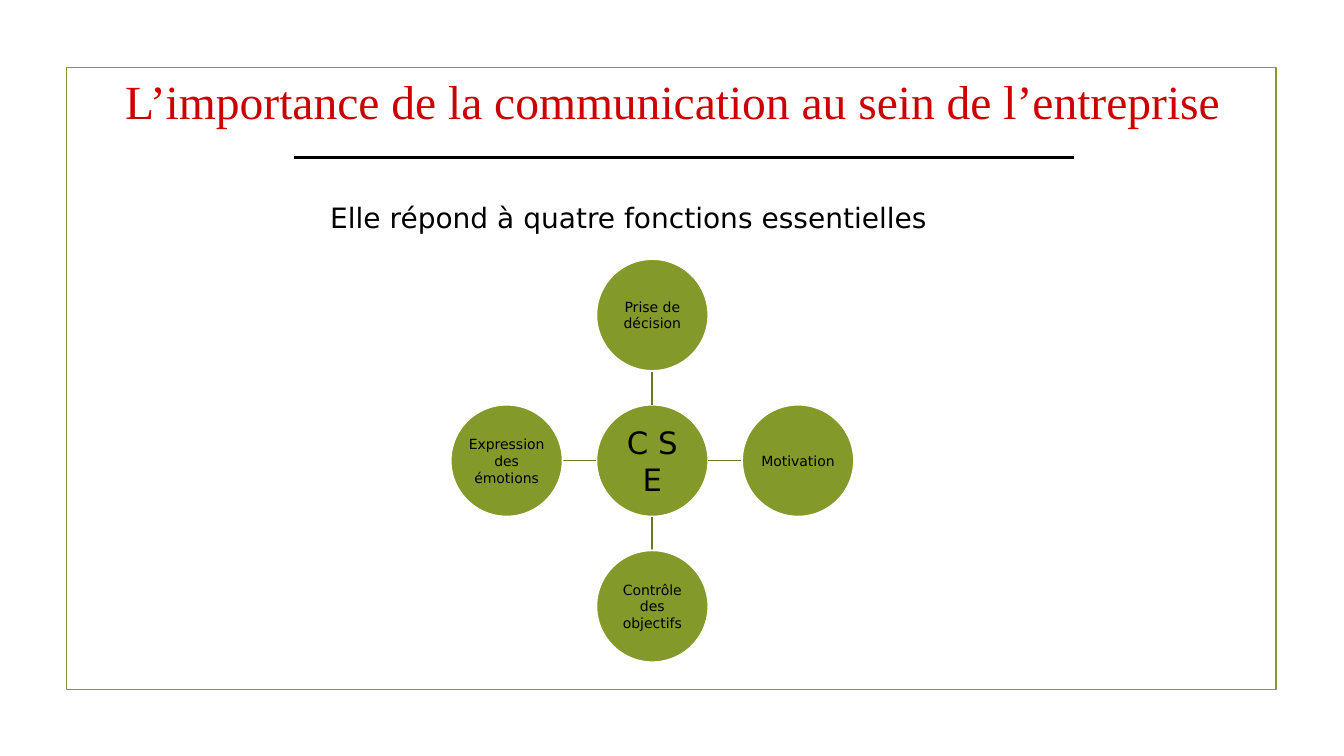
import pptx
import pptx.dml.color
import pptx.enum.shapes
import pptx.enum.text
import pptx.oxml.ns
import pptx.util
from lxml import etree

Inches = pptx.util.Inches
Pt = pptx.util.Pt
MIDDLE = pptx.enum.text.MSO_ANCHOR.MIDDLE
SHAPES = pptx.enum.shapes.MSO_SHAPE

COLORS = {"olive": "83992A", "spoke": "697B22", "title": "CC0000",
          "black": "000000", "white": "FFFFFF"}
BODY_FONT = "DejaVu Sans"
TITLE_FONT = "Times New Roman"

# Direction of each function as seen from the hub: (right, down)
FUNCTIONS = [("Prise de décision", (0, -1)),
             ("Motivation", (1, 0)),
             ("Contrôle des objectifs", (0, 1)),
             ("Expression des émotions", (-1, 0))]


def color(name):
    return pptx.dml.color.RGBColor.from_string(COLORS[name])


def write(frame, text, size, font, ink, inset=None):
    """Fill a text frame with one centred paragraph."""
    frame.word_wrap = True
    if inset is not None:
        frame.margin_left = frame.margin_right = Inches(inset)
        frame.margin_top = frame.margin_bottom = Inches(inset)
    paragraph = frame.paragraphs[0]
    paragraph.alignment = pptx.enum.text.PP_ALIGN.CENTER
    run = paragraph.add_run()
    run.text = text
    run.font.size = Pt(size)
    run.font.name = font
    run.font.color.rgb = color(ink)


def add_line(slide, start, end, ink, weight):
    line = slide.shapes.add_connector(
        pptx.enum.shapes.MSO_CONNECTOR.STRAIGHT,
        *(Inches(value) for value in (*start, *end)))
    line.line.color.rgb = color(ink)
    line.line.width = Pt(weight)
    etree.SubElement(line._element.spPr, pptx.oxml.ns.qn("a:effectLst"))


def add_frame(slide, left, top, width, height):
    border = slide.shapes.add_shape(
        SHAPES.RECTANGLE, Inches(left), Inches(top), Inches(width), Inches(height))
    border.shadow.inherit = False
    border.fill.background()
    border.line.color.rgb = color("olive")
    border.line.width = Pt(1.25)


def add_heading(slide, left, top, width, height):
    """Place the title and the rule below it."""
    title = slide.shapes.title
    title.left, title.top = Inches(left), Inches(top)
    title.width, title.height = Inches(width), Inches(height)
    title.text_frame.auto_size = pptx.enum.text.MSO_AUTO_SIZE.NONE
    title.text_frame.vertical_anchor = MIDDLE
    write(title.text_frame, "L’importance de la communication au sein de l’entreprise",
          34, TITLE_FONT, "title")
    rule_y = top + height - 0.1
    add_line(slide, (left + 2.08, rule_y), (left + 9.81, rule_y), "black", 2)


def add_intro(slide, left, top, width, height):
    intro = slide.shapes.add_textbox(
        Inches(left), Inches(top), Inches(width), Inches(height))
    write(intro.text_frame, "Elle répond à quatre fonctions essentielles",
          20, BODY_FONT, "black")


def add_circle(slide, center_x, center_y, diameter, text, size, inset):
    circle = slide.shapes.add_shape(
        SHAPES.OVAL, Inches(center_x - diameter / 2), Inches(center_y - diameter / 2),
        Inches(diameter), Inches(diameter))
    circle.shadow.inherit = False
    circle.fill.solid()
    circle.fill.fore_color.rgb = color("olive")
    circle.line.color.rgb = color("white")
    circle.line.width = Pt(1.25)
    circle.text_frame.vertical_anchor = MIDDLE
    write(circle.text_frame, text, size, BODY_FONT, "black", inset)


def add_radial_diagram(slide, left, top, side):
    """Draw the hub and its four functions in a square box."""
    diameter = 1.11
    radius = diameter / 2
    reach = (side - diameter) / 2
    hub_x, hub_y = left + side / 2, top + side / 2
    add_circle(slide, hub_x, hub_y, diameter, "C S E", 22, 0.02)
    for text, (right, down) in FUNCTIONS:
        start = (hub_x + right * radius, hub_y + down * radius)
        end = (hub_x + right * (reach - radius), hub_y + down * (reach - radius))
        add_line(slide, start, end, "spoke", 1.25)
        add_circle(slide, hub_x + right * reach, hub_y + down * reach,
                   diameter, text, 10, 0.01)


def main():
    presentation = pptx.Presentation()
    presentation.slide_width = Inches(13.33)
    presentation.slide_height = Inches(7.5)
    slide = presentation.slides.add_slide(presentation.slide_layouts[5])
    add_frame(slide, 0.66, 0.67, 12, 6.17)
    add_heading(slide, 0.84, 0.33, 11.67, 1.33)
    add_radial_diagram(slide, 4.47, 2.57, 4)
    add_intro(slide, 2.26, 1.94, 7.95, 0.43)
    presentation.save("out.pptx")


if __name__ == "__main__":
    main()
